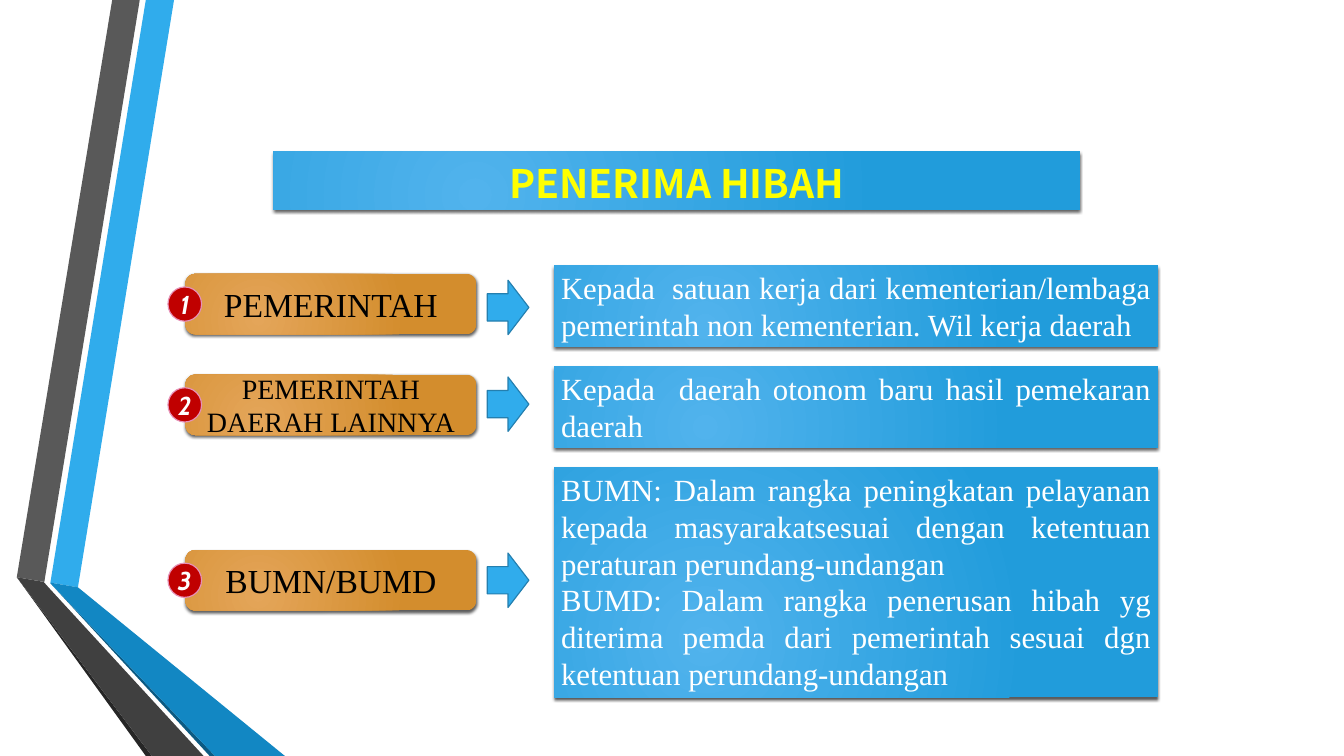
import pptx
import pptx.util
import pptx.oxml
import pptx.oxml.ns
from pptx.dml.color import RGBColor
from pptx.enum.shapes import MSO_SHAPE
from pptx.enum.text import MSO_ANCHOR, MSO_AUTO_SIZE, PP_ALIGN

Inches = pptx.util.Inches
Pt = pptx.util.Pt
qn = pptx.oxml.ns.qn

TITLE = "PENERIMA HIBAH"

RECIPIENTS = [
    {"label": "PEMERINTAH", "size": "label", "height": 1.21, "arrow_top": 4.17,
     "details": ["Kepada  satuan kerja dari kementerian/lembaga "
                 "pemerintah non kementerian. Wil kerja daerah"]},
    {"label": "PEMERINTAH DAERAH LAINNYA", "size": "long_label", "height": 1.21, "arrow_top": 5.61,
     "details": ["Kepada  daerah otonom baru hasil pemekaran daerah"]},
    {"label": "BUMN/BUMD", "size": "label", "height": 3.43, "arrow_top": 8.23,
     "details": ["BUMN: Dalam rangka peningkatan pelayanan kepada masyarakatsesuai "
                 "dengan ketentuan peraturan perundang-undangan",
                 "BUMD: Dalam rangka penerusan hibah yg diterima pemda dari pemerintah "
                 "sesuai dgn ketentuan perundang-undangan"]},
]

RIBBONS = [
    ("sky", [(0.75, 8.67), (1.16, 8.74), (2.59, 0), (2.17, 0)]),
    ("grey", [(2.08, 0), (1.67, 0), (0.25, 8.59), (0.66, 8.66)]),
    ("black", [(0.25, 8.59), (2.17, 11.25), (2.26, 11.25)]),
    ("navy", [(0.75, 8.68), (3.12, 11.25), (3.2, 11.25)]),
    ("ocean", [(0.75, 8.68), (3.2, 11.25), (4.24, 11.25), (1.16, 8.74), (0.75, 8.67)]),
    ("charcoal", [(3.03, 11.25), (0.73, 8.75), (0.65, 8.66), (0.25, 8.59), (2.26, 11.25)]),
]

THEME = {
    "colors": {"sky": "30ACEC", "grey": "595959", "black": "262626", "navy": "0C5A82",
               "ocean": "1287C3", "charcoal": "404040", "arrow_edge": "247FAF",
               "badge": "C00000", "badge_edge": "E691B7", "title": "FFFF00",
               "label": "000000", "light": "FFFFFF"},
    "gradients": {"blue": ("51B3ED", "219CDB"), "orange": ("E4A559", "D38D2D")},
    "sizes": {"title": 42, "label": 36, "long_label": 30, "detail": 33, "badge": 27.7},
    "fonts": {"title": "Noto Sans CJK KR", "body": "Times New Roman", "badge": "Cabin"},
    "edge": 1.25,
}

DETAIL_TOP, DETAIL_GAP = 3.95, 0.29
LABEL_HEIGHT, BADGE_HEIGHT = 0.9, 0.51
CENTER_SHIFT = -0.03


def color(name):
    return RGBColor.from_string(THEME["colors"][name])


def add_box(slide, preset, left, top, width, height):
    box = slide.shapes.add_shape(preset, Inches(left), Inches(top), Inches(width), Inches(height))
    box.shadow.inherit = False
    return box


def paint(shape, fill, edge=None):
    shape.fill.solid()
    shape.fill.fore_color.rgb = color(fill)
    if edge:
        shape.line.color.rgb = color(edge)
        shape.line.width = Pt(THEME["edge"])
    else:
        shape.line.fill.background()


def glow(shape, gradient):
    shape.fill.gradient()
    for stop, value in zip(shape.fill.gradient_stops, THEME["gradients"][gradient]):
        stop.color.rgb = RGBColor.from_string(value)
    shape.line.fill.background()
    properties = shape.element.spPr
    grad = properties.find(qn("a:gradFill"))
    namespace = pptx.oxml.ns.nsdecls("a")
    grad.replace(grad.find(qn("a:lin")), pptx.oxml.parse_xml(
        f'<a:path {namespace} path="circle">'
        '<a:fillToRect l="50000" t="100000" r="100000" b="50000"/></a:path>'))
    properties.find(qn("a:effectLst")).append(pptx.oxml.parse_xml(
        f'<a:outerShdw {namespace} blurRad="{Pt(3)}" dist="{Pt(2)}" dir="5400000" rotWithShape="0">'
        '<a:srgbClr val="000000"><a:alpha val="64000"/></a:srgbClr></a:outerShdw>'))


def write(shape, paragraphs, size, font, ink, align=PP_ALIGN.CENTER,
          anchor=MSO_ANCHOR.MIDDLE, bold=False, italic=False):
    frame = shape.text_frame
    frame.word_wrap = True
    frame.vertical_anchor = anchor
    for index, text in enumerate(paragraphs):
        paragraph = frame.add_paragraph() if index else frame.paragraphs[0]
        paragraph.alignment = align
        run = paragraph.add_run()
        run.text = text
        run.font.size = Pt(THEME["sizes"][size])
        run.font.name = THEME["fonts"][font]
        run.font.color.rgb = color(ink)
        run.font.bold = bold
        run.font.italic = italic
    return frame


def add_ribbon(slide, fill, points):
    corners = [(Inches(x), Inches(y)) for x, y in points]
    builder = slide.shapes.build_freeform(*corners[0])
    builder.add_line_segments(corners[1:], close=True)
    ribbon = builder.convert_to_shape()
    ribbon.shadow.inherit = False
    paint(ribbon, fill)


def add_recipient(slide, number, recipient, top):
    center = top + recipient["height"] / 2 + CENTER_SHIFT

    label = add_box(slide, MSO_SHAPE.ROUNDED_RECTANGLE, 2.76, center - LABEL_HEIGHT / 2,
                    4.33, LABEL_HEIGHT)
    glow(label, "orange")
    write(label, [recipient["label"]], recipient["size"], "body", "label")

    detail = add_box(slide, MSO_SHAPE.RECTANGLE, 8.25, top, 8.98, recipient["height"])
    glow(detail, "blue")
    frame = write(detail, recipient["details"], "detail", "body", "light", PP_ALIGN.JUSTIFY,
                  MSO_ANCHOR.TOP)
    frame.auto_size = MSO_AUTO_SIZE.SHAPE_TO_FIT_TEXT

    arrow = add_box(slide, MSO_SHAPE.RIGHT_ARROW, 7.25, recipient["arrow_top"], 0.62, 0.81)
    paint(arrow, "sky", "arrow_edge")

    badge = add_box(slide, MSO_SHAPE.OVAL, 2.5, center - BADGE_HEIGHT / 2, 0.5, BADGE_HEIGHT)
    paint(badge, "badge", "badge_edge")
    frame = write(badge, [str(number)], "badge", "badge", "light", bold=True, italic=True)
    frame.margin_left = frame.margin_right = frame.margin_top = frame.margin_bottom = 0


def main():
    deck = pptx.Presentation()
    deck.slide_width, deck.slide_height = Inches(20), Inches(11.25)
    slide = deck.slides.add_slide(deck.slide_layouts[6])

    for fill, points in RIBBONS:
        add_ribbon(slide, fill, points)

    banner = add_box(slide, MSO_SHAPE.RECTANGLE, 4.07, 2.25, 12, 0.87)
    glow(banner, "blue")
    write(banner, [TITLE], "title", "title", "title", anchor=MSO_ANCHOR.BOTTOM, bold=True)

    top = DETAIL_TOP
    for number, recipient in enumerate(RECIPIENTS, 1):
        add_recipient(slide, number, recipient, top)
        top += recipient["height"] + DETAIL_GAP

    deck.save("out.pptx")


if __name__ == "__main__":
    main()
